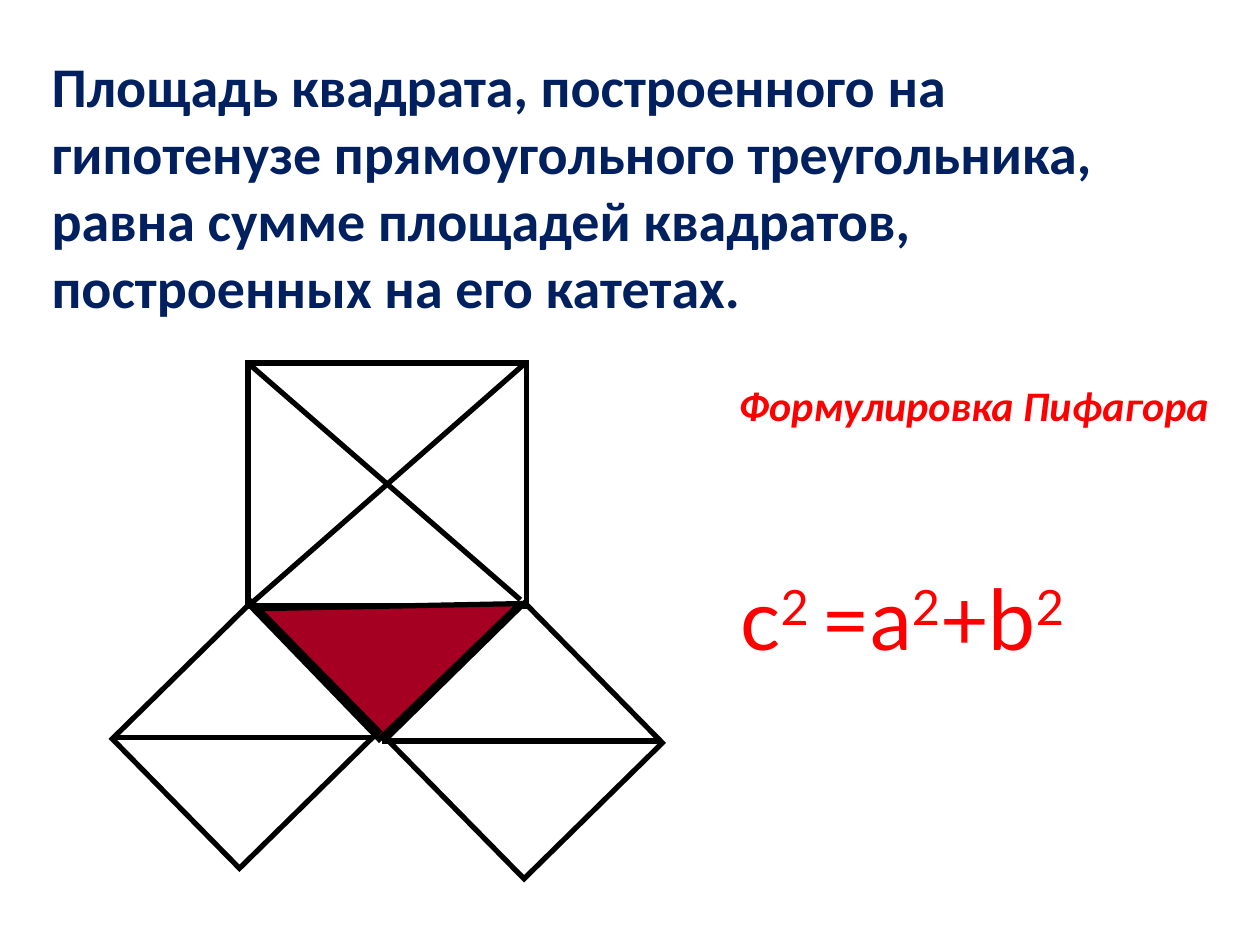
import pptx
import pptx.dml.color
import pptx.enum.shapes
import pptx.enum.text
import pptx.oxml.ns
import pptx.util
import lxml.etree

Cm = pptx.util.Cm
Pt = pptx.util.Pt
Shape = pptx.enum.shapes.MSO_SHAPE
Align = pptx.enum.text.PP_ALIGN

THEME = {
    "navy": "002060", "red": "FF0000", "triangle": "A50021", "line": "000000",
    "body_font": "Calibri", "formula_font": "Lato",
    "statement": 32, "caption": 24, "formula": 48, "line_width": 3,
}

STATEMENT = ("Площадь квадрата, построенного на гипотенузе прямоугольного "
             "треугольника, равна сумме площадей квадратов, построенных на его катетах.")
CAPTION = "Формулировка Пифагора"
FORMULA = [("с", False), ("2 ", True), ("=а", False), ("2", True), ("+b", False), ("2", True)]

# Boxes in cm: left, top, width, height
STATEMENT_BOX = (0.79, 0.91, 23.83, 7.95)
FORMULA_BOX = (14.68, 11.3, 8.61, 3.05)

# Preset, box in cm, rotation, fill
FIGURES = [
    (Shape.RECTANGLE, (5, 7.32, 5.61, 4.9), 0, None),
    (Shape.RIGHT_TRIANGLE, (5.82, 10.39, 3.94, 3.66), 316, "triangle"),
    (Shape.RECTANGLE, (3.12, 12.85, 3.66, 3.94), 45.5, None),
    (Shape.RECTANGLE, (8.59, 12.98, 3.96, 3.91), 45.5, None),
]
# Start x, start y, end x, end y in cm
DIAGONALS = [
    (2.29, 14.86, 7.49, 14.86),
    (7.7, 14.94, 13.31, 14.94),
    (5, 7.32, 10.49, 12.09),
    (5, 12.22, 10.59, 7.32),
]


def color(name):
    return pptx.dml.color.RGBColor.from_string(THEME[name])


def lengths(values):
    return [Cm(value) for value in values]


def style_line(line):
    line.color.rgb = color("line")
    line.width = Pt(THEME["line_width"])


def add_box(page, box):
    frame = page.shapes.add_textbox(*lengths(box)).text_frame
    frame.word_wrap = True
    return frame


def add_span(para, text, size, tint, font="body_font", **formats):
    span = para.add_run()
    span.text = text
    formats.update(size=Pt(THEME[size]), name=THEME[font])
    for name, value in formats.items():
        setattr(span.font, name, value)
    span.font.color.rgb = color(tint)
    return span


def add_drawing(page):
    group = page.shapes.add_group_shape()
    for preset, box, rotation, fill in FIGURES:
        figure = group.shapes.add_shape(preset, *lengths(box))
        figure.rotation = rotation
        figure.shadow.inherit = False
        if fill:
            figure.fill.solid()
            figure.fill.fore_color.rgb = color(fill)
        else:
            figure.fill.background()
        style_line(figure.line)
        outline = figure.line._get_or_add_ln()
        lxml.etree.SubElement(outline, pptx.oxml.ns.qn("a:miter"), lim="800000")
    for ends in DIAGONALS:
        diagonal = group.shapes.add_connector(
            pptx.enum.shapes.MSO_CONNECTOR.STRAIGHT, *lengths(ends))
        style_line(diagonal.line)
        lxml.etree.SubElement(diagonal._element.spPr, pptx.oxml.ns.qn("a:effectLst"))


def add_statement(page):
    frame = add_box(page, STATEMENT_BOX)
    add_span(frame.paragraphs[0], STATEMENT, "statement", "navy", bold=True)
    para = frame.add_paragraph()
    para.alignment = Align.RIGHT
    para.space_before = Pt(34)
    add_span(para, CAPTION, "caption", "red", bold=True, italic=True)


def add_formula(page):
    para = add_box(page, FORMULA_BOX).paragraphs[0]
    for text, raised in FORMULA:
        span = add_span(para, text, "formula", "red", "formula_font")
        if raised:
            span.font._element.set("baseline", "30000")


def main():
    deck = pptx.Presentation()
    deck.slide_width, deck.slide_height = Cm(25.4), Cm(19.05)
    page = deck.slides.add_slide(deck.slide_layouts[6])
    add_statement(page)
    add_drawing(page)
    add_formula(page)
    deck.save("out.pptx")


if __name__ == "__main__":
    main()
